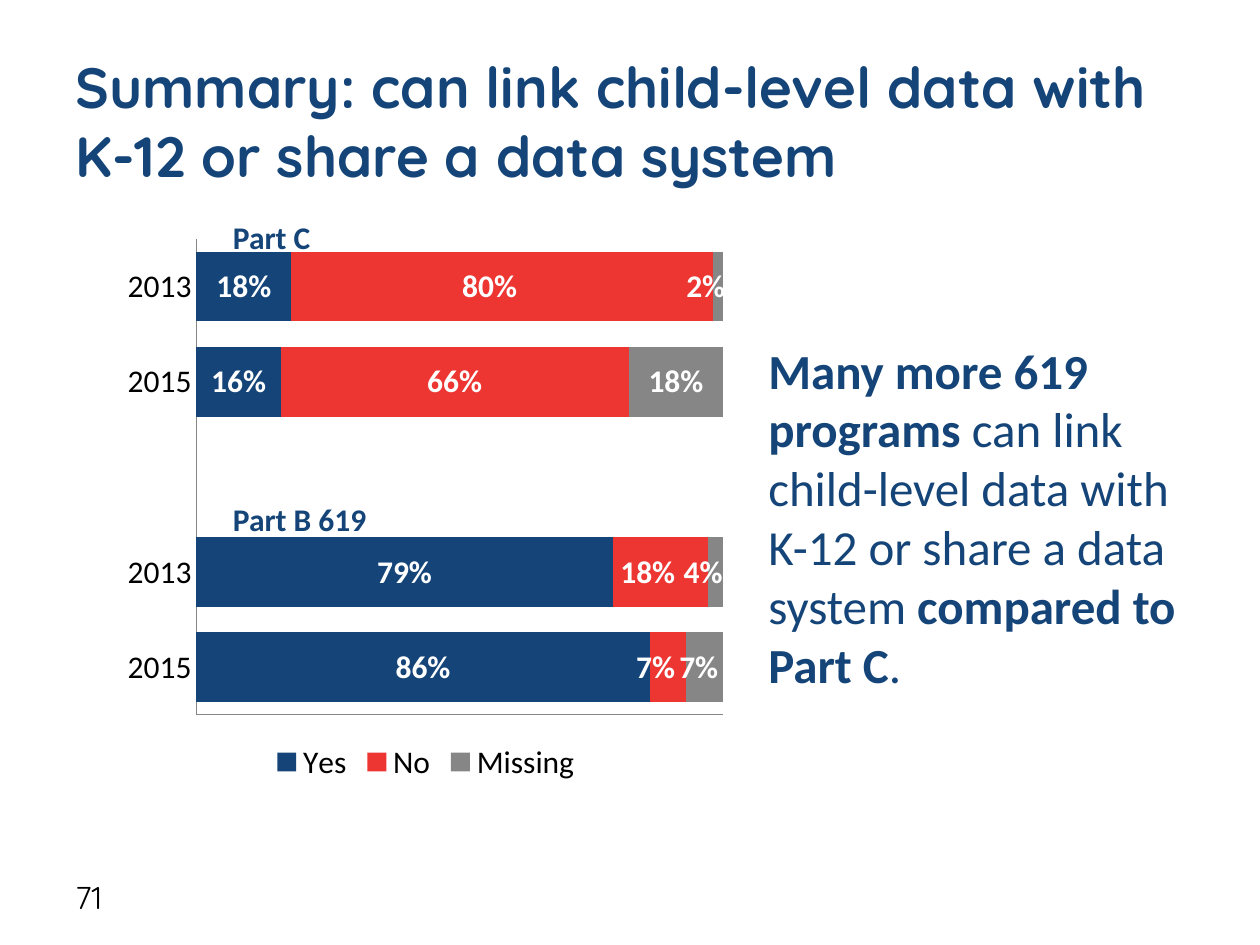
from pptx import Presentation
from pptx import util as u
from pptx.chart.data import CategoryChartData
from pptx.dml.color import RGBColor
from pptx.enum import chart as ch, text as tx
from pptx.oxml import parse_xml
from pptx.oxml.ns import nsdecls

THEME = {
    "head": "Quicksand", "body": "Calibri",
    "navy": "154578", "red": "ED3532", "gray": "868687",
    "axis": "868686", "white": "FFFFFF", "black": "000000",
    "title": 32.4, "big": 28, "small": 18,
}

# Place, runs as (text, bold), font, size, colour, anchor
MID, TOP = tx.MSO_ANCHOR.MIDDLE, tx.MSO_ANCHOR.TOP
TEXTS = [
    ((0.5, 0.33, 9, 1.25),
     [("Summary: can link child-level data with K-12 or share a data system", True)],
     "head", "title", "navy", MID),
    ((6, 2.65, 3.67, 2.93),
     [("Many more 619 programs", True),
      (" can link child-level data with K-12 or share a data system ", False),
      ("compared to Part C", True), (".", False)],
     "body", "big", "navy", TOP),
    ((1.75, 1.68, 0.85, 0.4), [("Part C", True)], "body", "small", "navy", TOP),
    ((1.75, 3.92, 1.42, 0.4), [("Part B 619", True)], "body", "small", "navy", TOP),
    ((0.5, 6.92, 2.33, 0.4), [("71", False)], "head", "small", "black", MID),
]

PLACE = (0.92, 1.81, 4.92, 4.44)
PLOT = (0.13, 0.02, 0.85, 0.85)
YEARS = ["2015", "2013", "", "2015", "2013"]
# Name, colour, values, sideways label shifts by bar
SERIES = [
    ("Yes", "navy", (0.86, 0.79, None, 0.16, 0.18), {}),
    ("No", "red", (0.07, 0.18, None, 0.66, 0.8), {0: -0.02, 1: -0.02, 4: -0.02}),
    ("Missing", "gray", (0.07, 0.04, None, 0.18, 0.02), {0: -0.01, 1: -0.02, 4: -0.02}),
]


def color(name):
    return RGBColor.from_string(THEME[name])


def style(font, face, size, tone, bold=None):
    font.name, font.size = THEME[face], u.Pt(THEME[size])
    font.color.rgb = color(tone)
    font.bold = bold


def layout(marks):
    """Make a manual chart layout from (tag, value) pairs."""
    body = "".join(f'<c:{tag} val="{val}"/>' for tag, val in marks)
    return parse_xml(f'<c:layout {nsdecls("c")}><c:manualLayout>{body}'
                     '</c:manualLayout></c:layout>')


def add_text(slide, place, runs, face, size, tone, anchor):
    frame = slide.shapes.add_textbox(*map(u.Inches, place)).text_frame
    frame.word_wrap = True
    frame.vertical_anchor = anchor
    par = frame.paragraphs[0]
    same = len(runs) == 1
    style(par.font, face, size, tone, runs[0][1] if same else None)
    for words, bold in runs:
        run = par.add_run()
        run.text = words
        if not same:
            run.font.bold = bold


def add_bars(slide):
    data = CategoryChartData(number_format="0%")
    data.categories = YEARS
    for name, _, vals, _ in SERIES:
        data.add_series(name, vals)
    chart = slide.shapes.add_chart(
        ch.XL_CHART_TYPE.BAR_STACKED, *map(u.Inches, PLACE), data).chart
    style(chart.font, "body", "small", "black")
    chart.has_title = False
    chart.has_legend = True
    chart.legend.position = ch.XL_LEGEND_POSITION.BOTTOM
    chart.legend.include_in_layout = False

    axis = chart.value_axis
    axis.minimum_scale, axis.maximum_scale, axis.major_unit = 0, 1, 0.2
    axis.has_major_gridlines = False
    axis.tick_label_position = ch.XL_TICK_LABEL_POSITION.NONE
    for line in (axis, chart.category_axis):
        line.major_tick_mark = line.minor_tick_mark = ch.XL_TICK_MARK.NONE
        line.format.line.color.rgb = color("axis")
        line.format.line.width = u.Pt(0.75)

    plot = chart.plots[0]
    plot.gap_width, plot.overlap = 37, 100
    plot.vary_by_categories = False
    for ser, (_, tone, _, shifts) in zip(plot.series, SERIES):
        ser.format.fill.solid()
        ser.format.fill.fore_color.rgb = color(tone)
        tags = ser.data_labels
        tags.show_value = True
        tags.number_format, tags.number_format_is_linked = "0%", False
        style(tags.font, "body", "small", "white", True)
        for spot, move in shifts.items():
            style(ser.points[spot].data_label.font, "body", "small", "white", True)
            tag = ser._element.xpath(f"c:dLbls/c:dLbl[c:idx/@val='{spot}']")[0]
            tag.insert(1, layout([("x", move), ("y", 0)]))

    area = chart._chartSpace.xpath("c:chart/c:plotArea")[0]
    for old in area.xpath("c:layout"):
        area.remove(old)
    marks = [("layoutTarget", "inner"), ("xMode", "edge"), ("yMode", "edge")]
    area.insert(0, layout(marks + list(zip("xywh", PLOT))))


def main():
    deck = Presentation()
    deck.slide_width, deck.slide_height = u.Inches(10), u.Inches(7.5)
    slide = deck.slides.add_slide(deck.slide_layouts[6])
    add_bars(slide)
    for item in TEXTS:
        add_text(slide, *item)
    deck.save("out.pptx")


if __name__ == "__main__":
    main()
